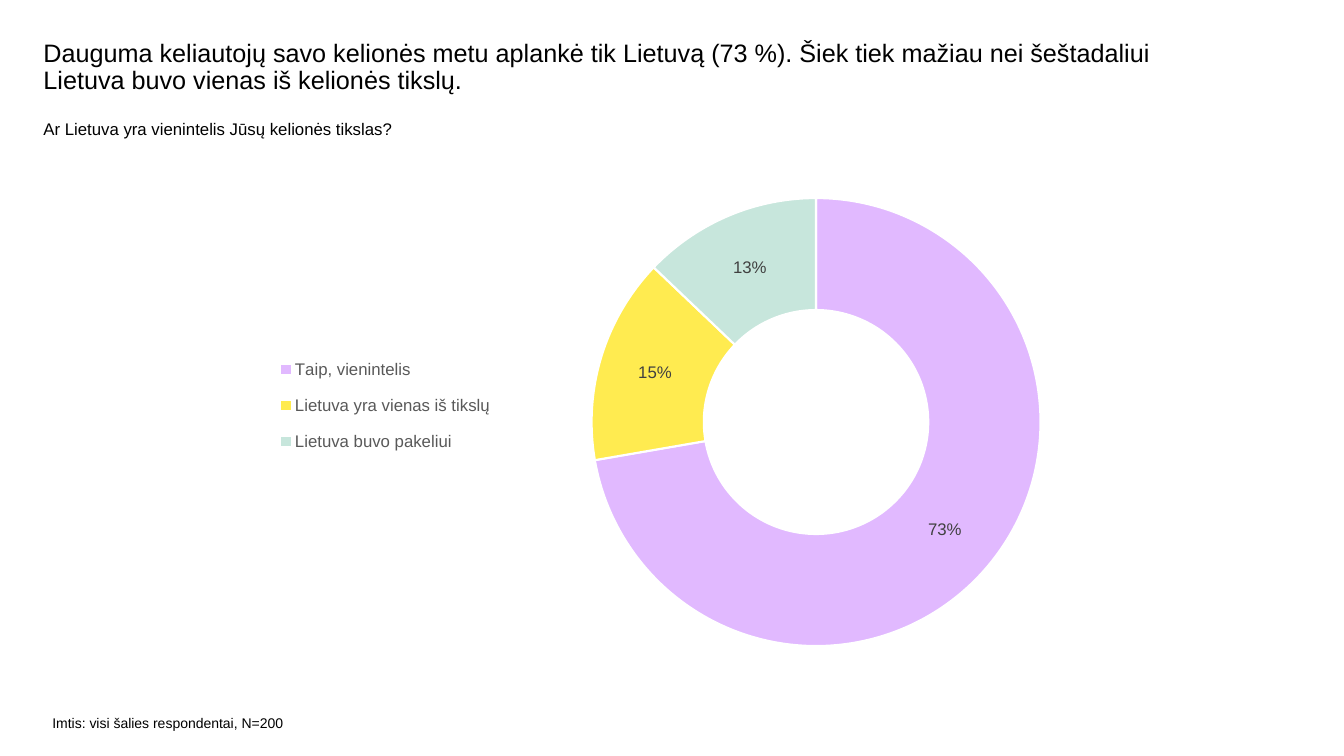
"""Build a slide with a doughnut chart on travellers' destinations."""
from lxml import etree
from pptx import Presentation
from pptx.chart.data import CategoryChartData
from pptx.dml.color import RGBColor
from pptx.enum.chart import XL_CHART_TYPE, XL_LEGEND_POSITION
from pptx.enum.text import MSO_ANCHOR, PP_ALIGN
from pptx.oxml.ns import qn
from pptx.util import Pt

DOUGHNUT = XL_CHART_TYPE.DOUGHNUT
LEGEND_BOTTOM = XL_LEGEND_POSITION.BOTTOM
TOP = MSO_ANCHOR.TOP
LEFT = PP_ALIGN.LEFT

FONT = "Arial"
COLORS = {
    "text": "000000", "legend": "595959", "label": "404040", "gap": "FFFFFF",
    "only": "E1B9FF", "one_of": "FFEB50", "transit": "C7E6DC",
}
TEXTS = [
    ("Dauguma keliautojų savo kelionės metu aplankė tik Lietuvą (73 %). "
     "Šiek tiek mažiau nei šeštadaliui Lietuva buvo vienas iš kelionės tikslų.",
     (31, 28.8, 810, 43.2), 18, 0.9),
    ("Ar Lietuva yra vienintelis Jūsų kelionės tikslas?",
     (31, 85, 856, 44), 12, 1),
    ("Imtis: visi šalies respondentai, N=200",
     (37.4, 510.5, 182, 17.3), 10, 1),
]
ANSWERS = [
    ("Taip, vienintelis", 0.73, "only"),
    ("Lietuva yra vienas iš tikslų", 0.15, "one_of"),
    ("Lietuva buvo pakeliui", 0.13, "transit"),
]
CHART_BOX = (72.7, 128.2, 699, 334)
PLOT_LAYOUT = (0.49, 0.04, 0.48, 0.96)
LEGEND_LAYOUT = (0.17, 0.35, 0.24, 0.27)


def rgb(name):
    return RGBColor.from_string(COLORS[name])


def style_font(font, size, color):
    font.name = FONT
    font.size = Pt(size)
    font.color.rgb = rgb(color)


def add_text(slide, text, box, size, spacing):
    frame = slide.shapes.add_textbox(*map(Pt, box)).text_frame
    frame.word_wrap = True
    frame.vertical_anchor = TOP
    frame.margin_left = frame.margin_right = 0
    frame.margin_top = frame.margin_bottom = 0
    paragraph = frame.paragraphs[0]
    paragraph.alignment = LEFT
    paragraph.line_spacing = spacing
    run = paragraph.add_run()
    run.text = text
    style_font(run.font, size, "text")


def set_layout(parent, position, fractions, inner=False):
    for old in parent.findall(qn("c:layout")):
        parent.remove(old)
    layout = etree.Element(qn("c:layout"))
    parent.insert(position, layout)
    manual = etree.SubElement(layout, qn("c:manualLayout"))
    settings = [("layoutTarget", "inner")] if inner else []
    settings += [("xMode", "edge"), ("yMode", "edge")]
    settings += zip("xywh", map(str, fractions))
    for tag, value in settings:
        etree.SubElement(manual, qn("c:" + tag)).set("val", value)


def add_answers_chart(slide):
    answers = CategoryChartData(number_format="0%")
    answers.categories = [name for name, _, _ in ANSWERS]
    answers.add_series("Series 1", [share for _, share, _ in ANSWERS])
    chart = slide.shapes.add_chart(DOUGHNUT, *map(Pt, CHART_BOX), answers).chart
    style_font(chart.font, 10, "text")
    chart.has_title = False
    chart.has_legend = True
    legend = chart.legend
    legend.position = LEGEND_BOTTOM
    legend.include_in_layout = False
    style_font(legend.font, 12, "legend")

    plot = chart.plots[0]
    plot.vary_by_categories = True
    plot.has_data_labels = True
    labels = plot.data_labels
    labels.show_value = True
    labels.show_percentage = False
    labels.number_format = "0%"
    labels.number_format_is_linked = False
    style_font(labels.font, 12, "label")
    for index, (_, _, color) in enumerate(ANSWERS):
        slice_format = plot.series[0].points[index].format
        slice_format.fill.solid()
        slice_format.fill.fore_color.rgb = rgb(color)
        slice_format.line.color.rgb = rgb("gap")
        slice_format.line.width = Pt(1.5)

    chart_root = chart.element
    chart_root.find(".//" + qn("c:holeSize")).set("val", "50")
    set_layout(chart_root.find(".//" + qn("c:plotArea")), 0, PLOT_LAYOUT, True)
    set_layout(chart_root.find(".//" + qn("c:legend")), 1, LEGEND_LAYOUT)


def main():
    presentation = Presentation()
    presentation.slide_width = Pt(960)
    presentation.slide_height = Pt(540)
    slide = presentation.slides.add_slide(presentation.slide_layouts[6])
    for entry in TEXTS:
        add_text(slide, *entry)
    add_answers_chart(slide)
    presentation.save("out.pptx")


if __name__ == "__main__":
    main()
